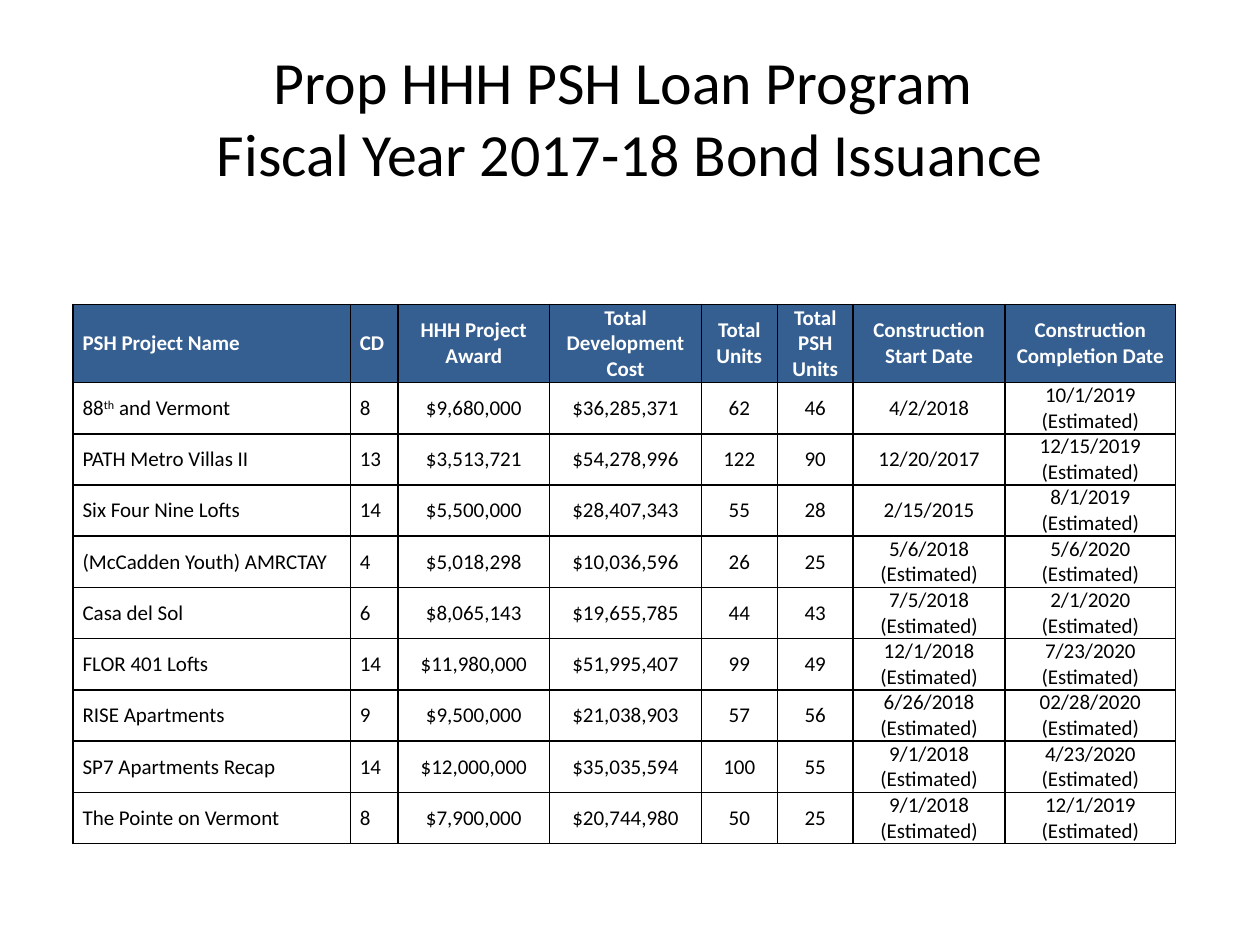
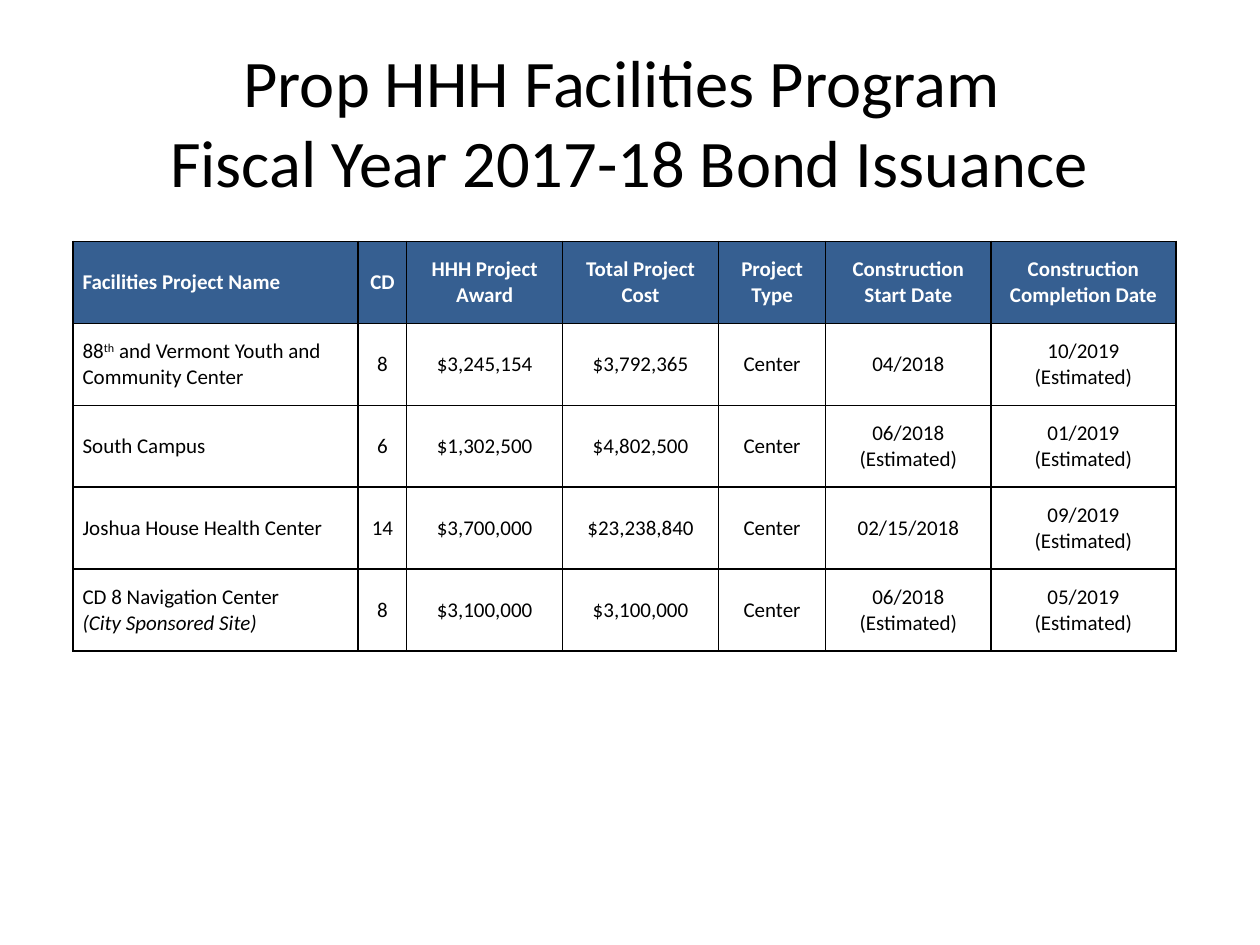
from lxml import etree
from pptx import Presentation
from pptx.dml.color import RGBColor
from pptx.enum import text
from pptx.oxml import ns
from pptx.util import Pt

# Shared look
COLORS = {"header": "365F91", "header_text": "FFFFFF", "ink": "000000"}
FONT = "Calibri"
TABLE_LEFT = 41.8
CELL_FORMAT = {
    "margin_left": Pt(5.4), "margin_right": Pt(5.4),
    "margin_top": Pt(0), "margin_bottom": Pt(0),
    "vertical_anchor": text.MSO_ANCHOR.MIDDLE,
}


def est(date):
    return f"{date} (Estimated)"


# Content: ^ encloses superscript, a second line in a cell is italic
LOANS = [
    ["PSH Project Name", "CD", "HHH Project Award", "Total Development Cost", "Total Units",
     "Total PSH Units", "Construction Start Date", "Construction Completion Date"],
    ["88^th^ and Vermont", "8", "$9,680,000", "$36,285,371", "62", "46",
     "4/2/2018", est("10/1/2019")],
    ["PATH Metro Villas II", "13", "$3,513,721", "$54,278,996", "122", "90",
     "12/20/2017", est("12/15/2019")],
    ["Six Four Nine Lofts", "14", "$5,500,000", "$28,407,343", "55", "28",
     "2/15/2015", est("8/1/2019")],
    ["(McCadden Youth) AMRCTAY", "4", "$5,018,298", "$10,036,596", "26", "25",
     est("5/6/2018"), est("5/6/2020")],
    ["Casa del Sol", "6", "$8,065,143", "$19,655,785", "44", "43",
     est("7/5/2018"), est("2/1/2020")],
    ["FLOR 401 Lofts", "14", "$11,980,000", "$51,995,407", "99", "49",
     est("12/1/2018"), est("7/23/2020")],
    ["RISE Apartments", "9", "$9,500,000", "$21,038,903", "57", "56",
     est("6/26/2018"), est("02/28/2020")],
    ["SP7 Apartments Recap", "14", "$12,000,000", "$35,035,594", "100", "55",
     est("9/1/2018"), est("4/23/2020")],
    ["The Pointe on Vermont", "8", "$7,900,000", "$20,744,980", "50", "25",
     est("9/1/2018"), est("12/1/2019")],
]
FACILITIES = [
    ["Facilities Project Name", "CD", "HHH Project Award", "Total Project Cost",
     "Project Type", "Construction Start Date", "Construction Completion Date"],
    ["88^th^ and Vermont Youth and Community Center", "8", "$3,245,154", "$3,792,365",
     "Center", "04/2018", est("10/2019")],
    ["South Campus", "6", "$1,302,500", "$4,802,500",
     "Center", est("06/2018"), est("01/2019")],
    ["Joshua House Health Center", "14", "$3,700,000", "$23,238,840",
     "Center", "02/15/2018", est("09/2019")],
    ["CD 8 Navigation Center\n(City Sponsored Site)", "8", "$3,100,000", "$3,100,000",
     "Center", est("06/2018"), est("05/2019")],
]


def style_font(font, size, color, **formats):
    font.color.rgb = RGBColor.from_string(COLORS[color])
    for name, value in {"name": FONT, "size": Pt(size), **formats}.items():
        setattr(font, name, value)


def add_title(slide, program, bounds, size):
    title = slide.shapes.title
    for side, length in zip(("left", "top", "width", "height"), bounds):
        setattr(title, side, Pt(length))
    frame = title.text_frame
    frame.text = f"{program} \vFiscal Year 2017-18 Bond Issuance"
    frame.auto_size = text.MSO_AUTO_SIZE.NONE
    frame.vertical_anchor = text.MSO_ANCHOR.MIDDLE
    heading = frame.paragraphs[0]
    heading.alignment = text.PP_ALIGN.CENTER
    for run in heading.runs:
        style_font(run.font, size, "ink")


def add_borders(cell):
    properties = cell._tc.get_or_add_tcPr()
    for edge in ("a:lnL", "a:lnR", "a:lnT", "a:lnB"):
        line = etree.SubElement(properties, ns.qn(edge), w=str(Pt(1)))
        fill = etree.SubElement(line, ns.qn("a:solidFill"))
        etree.SubElement(fill, ns.qn("a:srgbClr"), val=COLORS["ink"])


def fill_cell(cell, content, is_header, align):
    for name, value in CELL_FORMAT.items():
        setattr(cell, name, value)
    add_borders(cell)
    if is_header:
        cell.fill.solid()
        cell.fill.fore_color.rgb = RGBColor.from_string(COLORS["header"])
    else:
        cell.fill.background()

    frame = cell.text_frame
    for number, line in enumerate(content.split("\n")):
        paragraph = frame.add_paragraph() if number else frame.paragraphs[0]
        paragraph.alignment = align
        for part, words in enumerate(line.split("^")):
            run = paragraph.add_run()
            run.text = words
            style_font(run.font, 12, "header_text" if is_header else "ink",
                       bold=is_header, italic=number > 0)
            if part % 2:
                run._r.get_or_add_rPr().set("baseline", "30000")


def add_projects(slide, projects, top, widths, heights, left_columns):
    frame = slide.shapes.add_table(len(projects), len(widths), Pt(TABLE_LEFT), Pt(top),
                                   Pt(sum(widths)), Pt(sum(heights)))
    table = frame.table
    table.first_row = table.horz_banding = False
    for column, width in zip(table.columns, widths):
        column.width = Pt(width)
    for row, height, project in zip(table.rows, heights, projects):
        row.height = Pt(height)
        for index, content in enumerate(project):
            align = text.PP_ALIGN.LEFT if index < left_columns else text.PP_ALIGN.CENTER
            fill_cell(row.cells[index], content, project is projects[0], align)


def main():
    deck = Presentation()
    deck.slide_width, deck.slide_height = Pt(720), Pt(540)
    title_only = deck.slide_layouts[5]

    # Supportive housing loans
    loans = deck.slides.add_slide(title_only)
    add_title(loans, "Prop HHH PSH Loan Program", (36, 21.6, 648, 90), 34.2)
    add_projects(loans, LOANS, 174, [158.4, 27.2, 86.7, 86.7, 43.4, 43.4, 86.7, 97.6],
                 [44.6] + [28.1] * 9, left_columns=2)

    # Facilities
    facilities = deck.slides.add_slide(title_only)
    add_title(facilities, "Prop HHH Facilities Program", (7.2, 24, 705, 90), 38)
    add_projects(facilities, FACILITIES, 138, [162.9, 27.7, 89.1, 89.1, 61.3, 94.4, 105.7],
                 [46.8] * 5, left_columns=1)

    deck.save("out.pptx")


if __name__ == "__main__":
    main()
